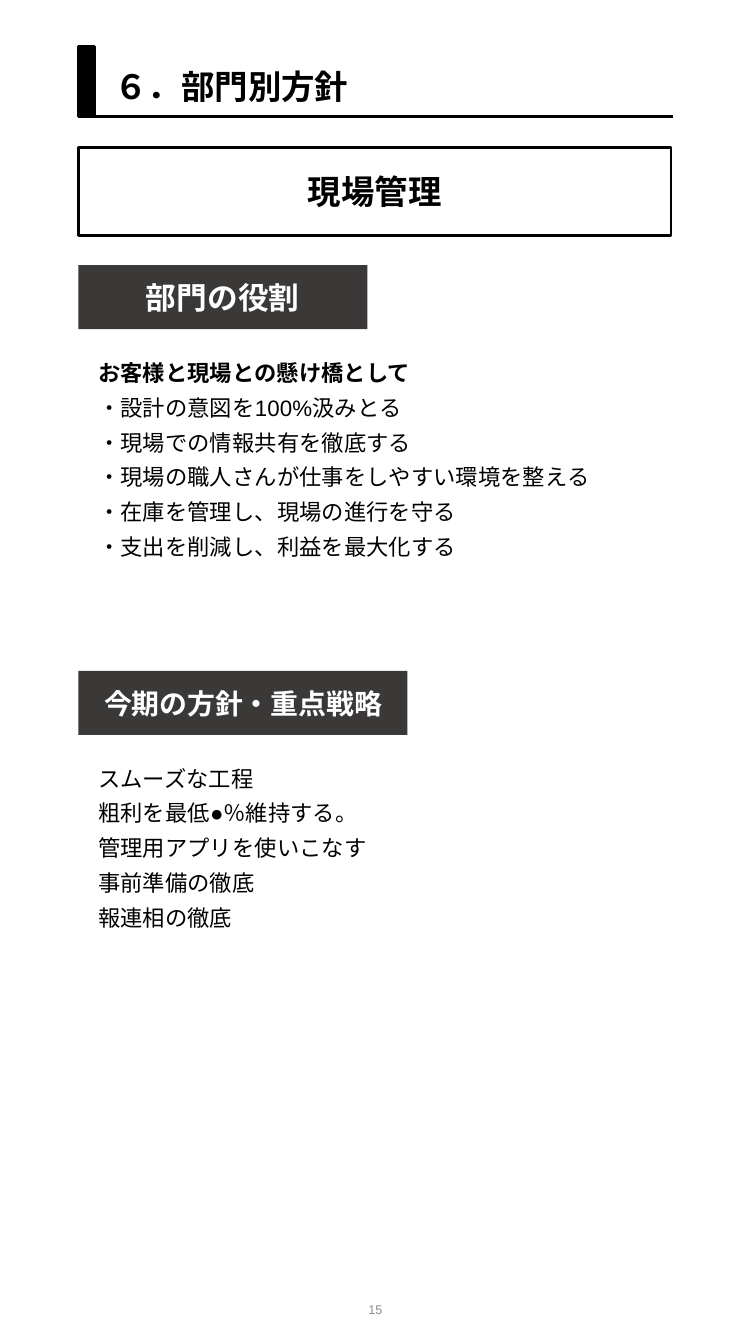
import dataclasses
import typing

import pptx
import pptx.dml.color
import pptx.enum.lang
import pptx.enum.shapes
import pptx.enum.text
import pptx.oxml.ns
import pptx.util
from lxml import etree

Pt = pptx.util.Pt
ALIGN = pptx.enum.text.PP_ALIGN
ANCHOR = pptx.enum.text.MSO_ANCHOR

FONT = "Arial"
COLORS = {"black": "000000", "white": "FFFFFF", "charcoal": "3B3838", "gray": "8C8C8C"}
PAGE_WIDTH, PAGE_HEIGHT = 269.3, 481.7
LEFT, CONTENT_WIDTH = 28.1, 212.6
RULE_RIGHT, RULE_Y = 241.2, 41.8
BAR_TOP, BAR_WIDTH = 16.6, 5.8
HEADING_HEIGHT = 23


@dataclasses.dataclass
class TextStyle:
    size: float
    color: str = "black"
    bold: bool = False
    align: typing.Any = ALIGN.LEFT
    anchor: typing.Any = ANCHOR.TOP
    line_spacing: float = 1.0


@dataclasses.dataclass
class Box:
    left: float
    top: float
    width: float
    height: float
    fill: str
    line: str | None = None
    text: str = ""
    size: float = 12
    text_color: str = "white"


@dataclasses.dataclass
class Section:
    heading: Box
    body_top: float
    body_height: float
    lines: list[str]
    lead: str | None = None


DEPARTMENT_BOXES = [
    Box(LEFT, BAR_TOP, BAR_WIDTH, RULE_Y - BAR_TOP, "black", "black"),
    Box(LEFT, 52.8, CONTENT_WIDTH, 31.6, "white", "black", "現場管理", 12, "black"),
]

SECTIONS = [
    Section(
        Box(LEFT, 95, 103.7, HEADING_HEIGHT, "charcoal", text="部門の役割", size=11),
        122.4,
        94.3,
        [
            "・設計の意図を100%汲みとる",
            "・現場での情報共有を徹底する",
            "・現場の職人さんが仕事をしやすい環境を整える",
            "・在庫を管理し、現場の進行を守る",
            "・支出を削減し、利益を最大化する",
        ],
        lead="お客様と現場との懸け橋として",
    ),
    Section(
        Box(LEFT, 240.4, 118, HEADING_HEIGHT, "charcoal", text="今期の方針・重点戦略", size=10),
        267.8,
        69.1,
        [
            "スムーズな工程",
            "粗利を最低●％維持する。",
            "管理用アプリを使いこなす",
            "事前準備の徹底",
            "報連相の徹底",
        ],
    ),
]


def rgb(name: str) -> pptx.dml.color.RGBColor:
    return pptx.dml.color.RGBColor.from_string(COLORS[name])


def write_text(frame, text: str, style: TextStyle) -> None:
    frame.text = text
    frame.word_wrap = True
    frame.auto_size = pptx.enum.text.MSO_AUTO_SIZE.NONE
    frame.vertical_anchor = style.anchor
    for paragraph in frame.paragraphs:
        paragraph.alignment = style.align
        paragraph.line_spacing = style.line_spacing
        for run in paragraph.runs:
            run.font.name = FONT
            run.font.size = Pt(style.size)
            run.font.bold = style.bold
            run.font.color.rgb = rgb(style.color)
            run.font.language_id = pptx.enum.lang.MSO_LANGUAGE_ID.JAPANESE
            east_asian = etree.SubElement(run.font._element, pptx.oxml.ns.qn("a:ea"))
            east_asian.set("typeface", FONT)


def add_text(slide, left: float, top: float, width: float, height: float,
             text: str, style: TextStyle):
    box = slide.shapes.add_textbox(Pt(left), Pt(top), Pt(width), Pt(height))
    write_text(box.text_frame, text, style)
    return box.text_frame


def add_box(slide, box: Box) -> None:
    shape = slide.shapes.add_shape(
        pptx.enum.shapes.MSO_SHAPE.RECTANGLE,
        Pt(box.left), Pt(box.top), Pt(box.width), Pt(box.height),
    )
    shape.shadow.inherit = False
    shape.fill.solid()
    shape.fill.fore_color.rgb = rgb(box.fill)
    if box.line:
        shape.line.color.rgb = rgb(box.line)
        shape.line.width = Pt(1)
    else:
        shape.line.fill.background()
    if box.text:
        style = TextStyle(box.size, box.text_color, True, ALIGN.CENTER, ANCHOR.MIDDLE)
        write_text(shape.text_frame, box.text, style)


def add_title_rule(slide) -> None:
    rule = slide.shapes.add_connector(
        pptx.enum.shapes.MSO_CONNECTOR.STRAIGHT,
        Pt(LEFT), Pt(RULE_Y), Pt(RULE_RIGHT), Pt(RULE_Y),
    )
    rule.line.color.rgb = rgb("black")
    rule.line.width = Pt(1)
    etree.SubElement(rule._element.spPr, pptx.oxml.ns.qn("a:effectLst"))


def place_title(slide, text: str) -> None:
    title = slide.shapes.title
    title.left, title.top = Pt(33.8), Pt(20.2)
    title.width, title.height = Pt(205.2), Pt(21.6)
    write_text(title.text_frame, text, TextStyle(12, bold=True))


def add_section(slide, section: Section) -> None:
    add_box(slide, section.heading)
    lines = ([section.lead] if section.lead else []) + section.lines
    body = add_text(slide, LEFT, section.body_top, CONTENT_WIDTH, section.body_height,
                    "\n".join(lines), TextStyle(8, line_spacing=1.3))
    if section.lead:
        body.paragraphs[0].runs[0].font.bold = True


def main() -> None:
    deck = pptx.Presentation()
    deck.slide_width, deck.slide_height = Pt(PAGE_WIDTH), Pt(PAGE_HEIGHT)
    slide = deck.slides.add_slide(deck.slide_layouts[5])
    place_title(slide, "６．部門別方針")
    add_title_rule(slide)
    for box in DEPARTMENT_BOXES:
        add_box(slide, box)
    for section in SECTIONS:
        add_section(slide, section)
    add_text(slide, 104.4, 456.5, 60.5, 25.9, "15",
             TextStyle(4.5, "gray", align=ALIGN.CENTER, anchor=ANCHOR.MIDDLE))
    deck.save("out.pptx")


if __name__ == "__main__":
    main()
